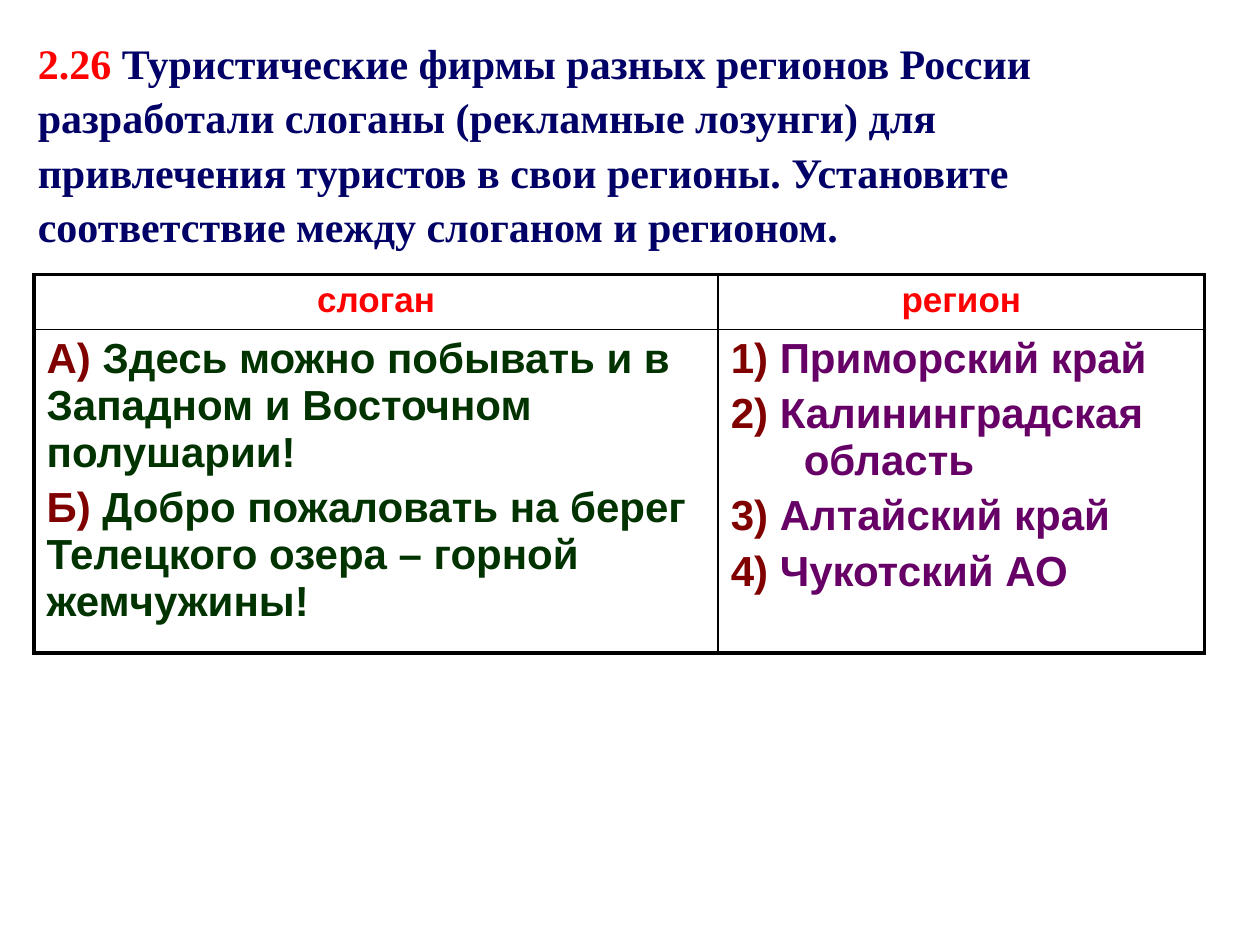
from lxml.etree import SubElement
from pptx import Presentation
from pptx.dml.color import RGBColor
from pptx.enum.text import MSO_ANCHOR, MSO_AUTO_SIZE, PP_ALIGN
from pptx.oxml.ns import qn
from pptx.util import Inches, Pt

COLORS = {
    "accent": "FF0000",
    "title": "000066",
    "label": "800000",
    "slogan": "003300",
    "region": "660066",
    "border": "000000",
}


def add_run(paragraph, text, color):
    run = paragraph.add_run()
    run.text = text
    run.font.color.rgb = RGBColor.from_string(COLORS[color])


def set_border(cell, side, width):
    line = SubElement(cell._tc.get_or_add_tcPr(), qn(f"a:ln{side}"), w=str(Pt(width)))
    fill = SubElement(line, qn("a:solidFill"))
    SubElement(fill, qn("a:srgbClr"), val=COLORS["border"])


prs = Presentation()
prs.slide_width, prs.slide_height = Inches(10), Inches(7.5)
slide = prs.slides.add_slide(prs.slide_layouts[5])

title = slide.shapes.title
title.left, title.top = Inches(0.2), Inches(0.28)
title.width, title.height = Inches(9.37), Inches(1.7)
title.text_frame.word_wrap = True
title.text_frame.auto_size = MSO_AUTO_SIZE.SHAPE_TO_FIT_TEXT
title.text_frame.vertical_anchor = MSO_ANCHOR.MIDDLE
task = title.text_frame.paragraphs[0]
task.alignment = PP_ALIGN.LEFT
task.line_spacing = 1.08
add_run(task, "2.26 ", "accent")
add_run(
    task,
    "Туристические фирмы разных регионов России разработали слоганы "
    "(рекламные лозунги) для привлечения туристов в свои регионы. "
    "Установите соответствие между слоганом и регионом.",
    "title",
)
task.font.name, task.font.size, task.font.bold = "Times New Roman", Pt(24), True

columns = [
    ("слоган", "slogan", 5.43, 0, [
        ("А)", " Здесь можно побывать и в Западном и Восточном полушарии!"),
        ("Б)", " Добро пожаловать на берег Телецкого озера – горной жемчужины!"),
    ]),
    ("регион", "region", 3.86, 0.58, [
        ("1)", " Приморский край"),
        ("2)", " Калининградская область"),
        ("3)", " Алтайский край"),
        ("4)", " Чукотский АО"),
    ]),
]
row_heights = [0.43, 2.57]

matching = slide.shapes.add_table(
    2, 2, Inches(0.27), Inches(2.18), Inches(9.29), Inches(sum(row_heights))
).table
matching.first_row = matching.horz_banding = False
for row, height in zip(matching.rows, row_heights):
    row.height = Inches(height)

for col, (heading, color, width, indent, options) in enumerate(columns):
    matching.columns[col].width = Inches(width)

    heading_line = matching.cell(0, col).text_frame.paragraphs[0]
    heading_line.alignment = PP_ALIGN.CENTER
    add_run(heading_line, heading, "accent")
    heading_line.font.name, heading_line.font.size = "Arial", Pt(20)
    heading_line.font.bold = True

    frame = matching.cell(1, col).text_frame
    for number, (label, text) in enumerate(options):
        option = frame.add_paragraph() if number else frame.paragraphs[0]
        if number:
            option.space_before = Pt(4.8)
        if indent:
            properties = option._p.get_or_add_pPr()
            properties.set("marL", str(Inches(indent)))
            properties.set("indent", str(-Inches(indent)))
        add_run(option, label, "label")
        add_run(option, text, color)
        option.font.name, option.font.size, option.font.bold = "Arial", Pt(24), True

    for row in range(2):
        cell = matching.cell(row, col)
        outer = {"L": col == 0, "R": col == 1, "T": row == 0, "B": row == 1}
        for side, is_outer in outer.items():
            set_border(cell, side, 2.25 if is_outer else 1)
        cell.fill.background()

prs.save("out.pptx")
